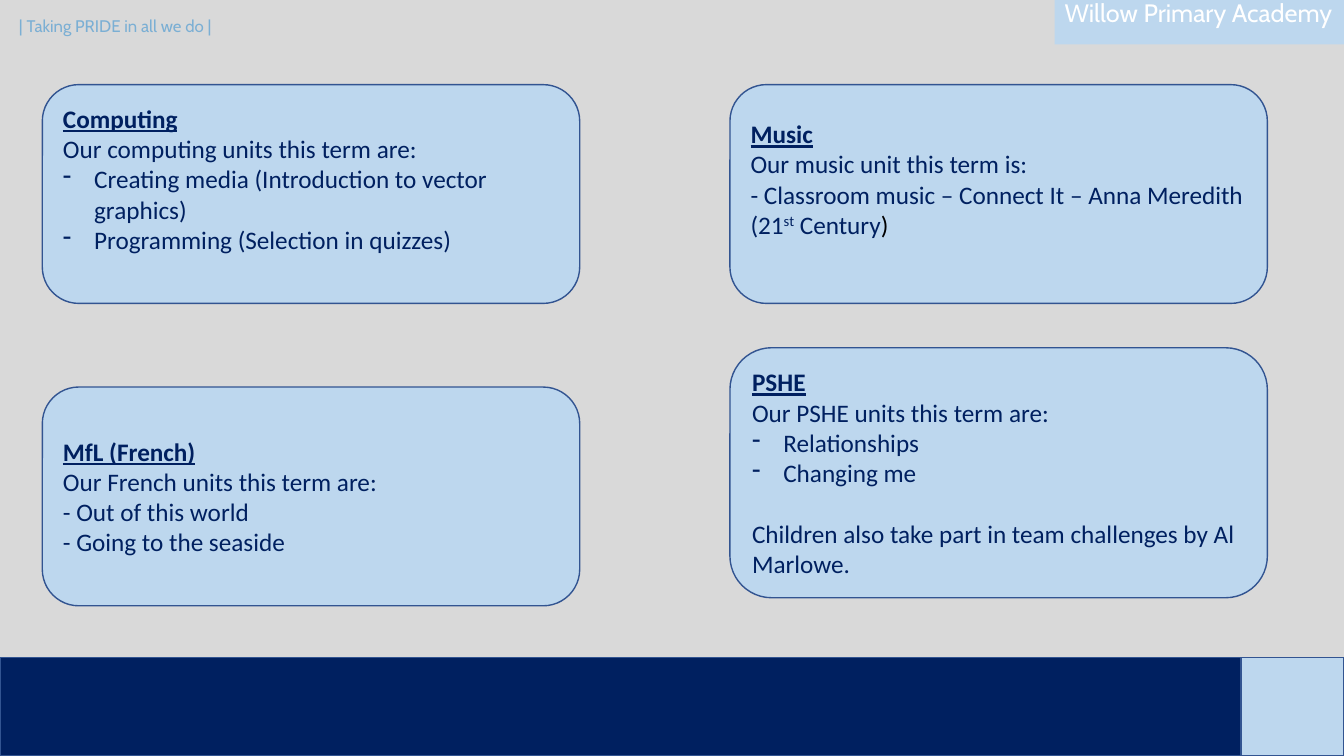
from pptx import Presentation
from pptx.dml.color import RGBColor
from pptx.enum.shapes import MSO_SHAPE
from pptx.enum.text import MSO_ANCHOR, PP_ALIGN
from pptx.oxml.ns import qn
from pptx.util import Inches, Pt
from lxml.etree import SubElement

HUES = {
    "page": "D9D9D9",
    "navy": "002060",
    "pale": "BDD7EE",
    "edge": "325491",
    "motto": "7BAFD4",
    "white": "FFFFFF",
    "black": "000000",
}


def hue(name):
    return RGBColor.from_string(HUES[name])


def add_box(kind, left, top, width, height, fill, line=True):
    box = slide.shapes.add_shape(
        kind, Inches(left), Inches(top), Inches(width), Inches(height))
    box.shadow.inherit = False
    box.fill.solid()
    box.fill.fore_color.rgb = hue(fill)
    if line:
        box.line.color.rgb = hue("edge")
        box.line.width = Pt(1)
    else:
        box.line.fill.background()
    return box


deck = Presentation()
deck.slide_width = Inches(13.33)
deck.slide_height = Inches(7.5)
slide = deck.slides.add_slide(deck.slide_layouts[6])
slide.background.fill.solid()
slide.background.fill.fore_color.rgb = hue("page")

add_box(MSO_SHAPE.RECTANGLE, 0, 6.52, 13.33, 0.98, "navy")
add_box(MSO_SHAPE.RECTANGLE, 12.31, 6.52, 1.02, 0.98, "pale")

motto = slide.shapes.add_textbox(
    Inches(0.09), Inches(0.06), Inches(2.64), Inches(0.4))
school = add_box(MSO_SHAPE.RECTANGLE, 10.46, 0, 2.87, 0.44, "pale", False)
heads = [
    (motto, "| Taking PRIDE in all we do |", 12, "motto", 0.1),
    (school, "Willow Primary Academy", 18, "white", 0.2),
]
for box, text, size, tint, base in heads:
    frame = box.text_frame
    frame.word_wrap = False
    frame.vertical_anchor = MSO_ANCHOR.MIDDLE
    frame.margin_left = frame.margin_right = Inches(0.1)
    frame.margin_top = Inches(0.2 - base)
    frame.margin_bottom = Inches(base)
    para = frame.paragraphs[0]
    para.text = text
    para.alignment = PP_ALIGN.LEFT
    para.font.name = "Cabin"
    para.font.size = Pt(size)
    para.font.color.rgb = hue(tint)

cards = [
    (0.42, 0.84, 2.17, 0.35, "Computing", [
        ("Our computing units this term are:", "plain"),
        ("Creating media (Introduction to vector graphics)", "dash"),
        ("Programming (Selection in quizzes)", "dash"),
    ]),
    (7.24, 0.84, 2.17, 0.35, "Music", [
        ("Our music unit this term is:", "plain"),
        ("- Classroom music – Connect It – Anna Meredith (21", "music"),
    ]),
    (7.24, 3.45, 2.48, 0.05, "PSHE", [
        ("Our PSHE units this term are:", "plain"),
        ("Relationships", "dash"),
        ("Changing me", "dash"),
        ("Children also take part in team challenges by Al Marlowe.", "apart"),
    ]),
    (0.42, 3.84, 2.17, 0.05, "MfL (French)", [
        ("Our French units this term are:", "plain"),
        ("- Out of this world", "plain"),
        ("- Going to the seaside", "plain"),
    ]),
]
for left, top, height, base, title, lines in cards:
    card = add_box(MSO_SHAPE.ROUNDED_RECTANGLE, left, top, 5.33, height, "pale")
    frame = card.text_frame
    frame.word_wrap = True
    frame.vertical_anchor = MSO_ANCHOR.MIDDLE
    frame.margin_bottom = Inches(base)
    for step, (text, role) in enumerate([(title, "title")] + lines):
        para = frame.paragraphs[0] if step == 0 else frame.add_paragraph()
        para.text = text
        para.alignment = PP_ALIGN.LEFT
        if role == "apart":
            para.space_before = Pt(22)
        if role == "dash":
            props = para._p.get_or_add_pPr()
            props.set("marL", str(Inches(0.31)))
            props.set("indent", str(-Inches(0.31)))
            SubElement(props, qn("a:buChar")).set("char", "-")
        para.font.name = "Calibri"
        para.font.size = Pt(18)
        para.font.color.rgb = hue("navy")
        para.font.bold = para.font.underline = role == "title"
        if role == "music":
            power = para.add_run()
            power.text = "st"
            power.font._element.set("baseline", "30000")
            para.add_run().text = " Century"
            close = para.add_run()
            close.text = ")"
            close.font.color.rgb = hue("black")

deck.save("out.pptx")
